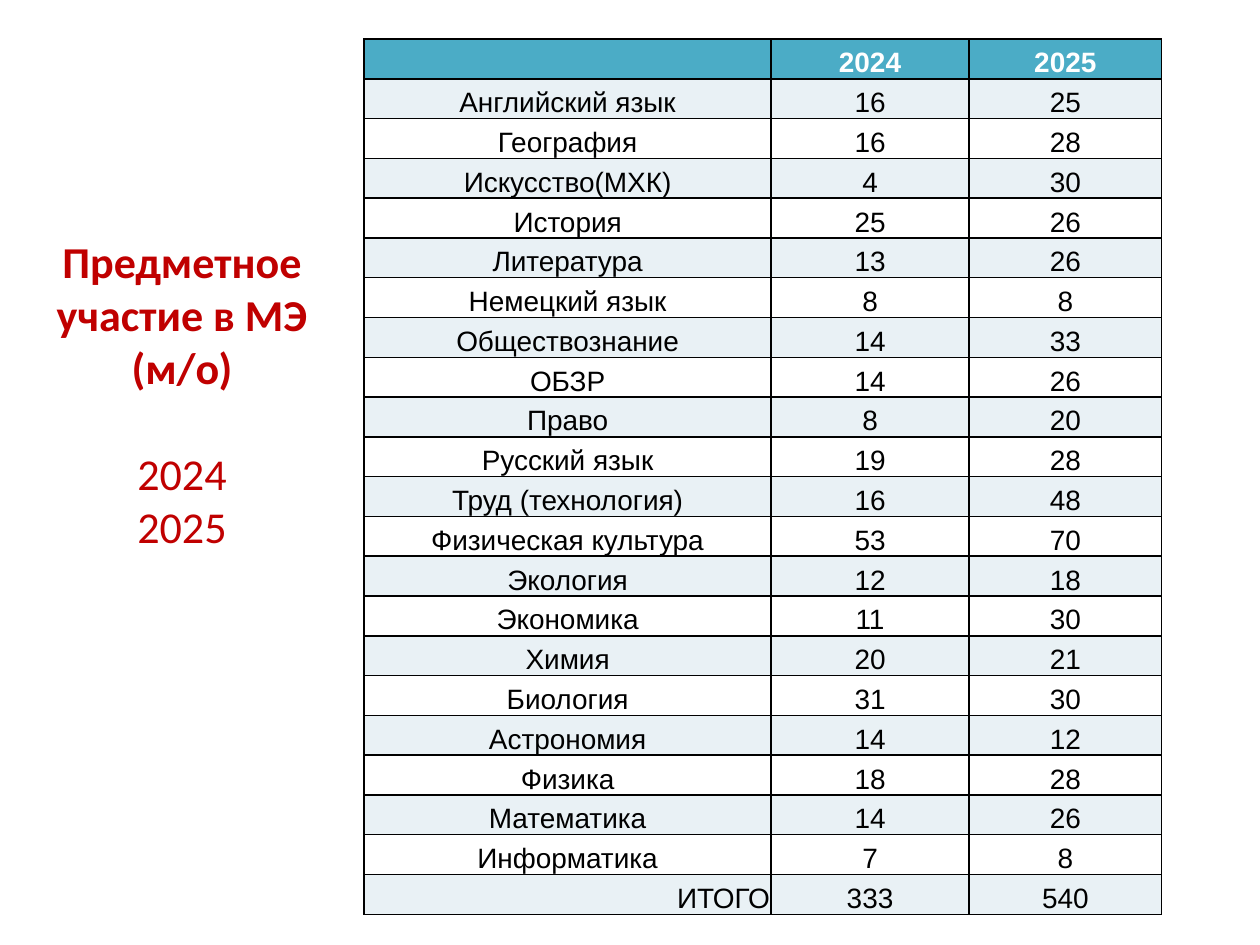
"""Build a slide with a table of subject participation in 2024 and 2025."""
from typing import NamedTuple

from lxml import etree
from pptx import Presentation
from pptx.dml.color import RGBColor
from pptx.enum.text import MSO_ANCHOR, MSO_AUTO_SIZE, PP_ALIGN
from pptx.oxml.ns import qn
from pptx.util import Inches, Pt

CENTER, RIGHT = PP_ALIGN.CENTER, PP_ALIGN.RIGHT
MIDDLE, BOTTOM = MSO_ANCHOR.MIDDLE, MSO_ANCHOR.BOTTOM
NO_AUTOFIT = MSO_AUTO_SIZE.NONE

RED, BLACK, WHITE = "C00000", "000000", "FFFFFF"
HEADER_FILL, BAND_FILL = "4BACC6", "E9F1F5"
COLUMN_WIDTHS = (3.23, 1.57, 1.53)
TABLE_LEFT, TABLE_TOP, TABLE_HEIGHT = 2.89, 0.31, 6.95
TITLE_FRAME = {"left": 0.31, "top": 1.87, "width": 2.27, "height": 2.5}
CELL_FORMAT = {
    "margin_left": Inches(0.01),
    "margin_right": Inches(0.01),
    "margin_top": Inches(0.01),
    "margin_bottom": 0,
    "vertical_anchor": BOTTOM,
}


class Subject(NamedTuple):
    name: str
    count_2024: int
    count_2025: int


SUBJECTS = (
    Subject("Английский язык", 16, 25),
    Subject("География", 16, 28),
    Subject("Искусство(МХК)", 4, 30),
    Subject("История", 25, 26),
    Subject("Литература", 13, 26),
    Subject("Немецкий язык", 8, 8),
    Subject("Обществознание", 14, 33),
    Subject("ОБЗР", 14, 26),
    Subject("Право", 8, 20),
    Subject("Русский язык", 19, 28),
    Subject("Труд (технология)", 16, 48),
    Subject("Физическая культура", 53, 70),
    Subject("Экология", 12, 18),
    Subject("Экономика", 11, 30),
    Subject("Химия", 20, 21),
    Subject("Биология", 31, 30),
    Subject("Астрономия", 14, 12),
    Subject("Физика", 18, 28),
    Subject("Математика", 14, 26),
    Subject("Информатика", 7, 8),
    Subject("ИТОГО", 333, 540),
)


def color(hex_value: str) -> RGBColor:
    return RGBColor.from_string(hex_value)


def format_font(font, name: str, size: float, hex_value: str, bold: bool) -> None:
    for attribute, value in {"name": name, "size": Pt(size), "bold": bold}.items():
        setattr(font, attribute, value)
    font.color.rgb = color(hex_value)


def add_borders(cell) -> None:
    properties = cell._tc.get_or_add_tcPr()
    for position, tag in enumerate(("a:lnL", "a:lnR", "a:lnT", "a:lnB")):
        line = etree.Element(qn(tag), w=str(Pt(1)))
        fill = etree.SubElement(line, qn("a:solidFill"))
        etree.SubElement(fill, qn("a:srgbClr"), val=BLACK)
        properties.insert(position, line)


def fill_cell(cell, text: str, fill: str, text_color: str, bold: bool, alignment) -> None:
    for attribute, value in CELL_FORMAT.items():
        setattr(cell, attribute, value)
    cell.fill.solid()
    cell.fill.fore_color.rgb = color(fill)
    add_borders(cell)
    if text:
        paragraph = cell.text_frame.paragraphs[0]
        paragraph.alignment = alignment
        run = paragraph.add_run()
        run.text = text
        format_font(run.font, "Arial", 16, text_color, bold)


def add_title(slide) -> None:
    title = slide.shapes.title
    for attribute, value in TITLE_FRAME.items():
        setattr(title, attribute, Inches(value))
    frame = title.text_frame
    frame.text = "Предметное участие в МЭ (м/о)"
    frame.add_paragraph().text = "2024\v2025"
    frame.word_wrap = True
    frame.auto_size = NO_AUTOFIT
    frame.vertical_anchor = MIDDLE
    heading, years = frame.paragraphs
    years.space_before = Pt(30.5)
    for paragraph, bold in ((heading, True), (years, False)):
        paragraph.alignment = CENTER
        for run in paragraph.runs:
            format_font(run.font, "Calibri", 25.2, RED, bold)


def add_subject_table(slide) -> None:
    rows = [("", "2024", "2025"), *SUBJECTS]
    table = slide.shapes.add_table(
        len(rows), len(COLUMN_WIDTHS), Inches(TABLE_LEFT), Inches(TABLE_TOP),
        Inches(sum(COLUMN_WIDTHS)), Inches(TABLE_HEIGHT),
    ).table
    for column, width in zip(table.columns, COLUMN_WIDTHS):
        column.width = Inches(width)
    for row_index, values in enumerate(rows):
        table.rows[row_index].height = Inches(TABLE_HEIGHT / len(rows))
        header = row_index == 0
        band = BAND_FILL if row_index % 2 else WHITE
        for column_index, value in enumerate(values):
            fill_cell(
                table.cell(row_index, column_index), str(value),
                HEADER_FILL if header else band,
                WHITE if header else BLACK, header,
                RIGHT if value == "ИТОГО" else CENTER,
            )


def main() -> None:
    presentation = Presentation()
    presentation.slide_width, presentation.slide_height = Inches(10), Inches(7.5)
    slide = presentation.slides.add_slide(presentation.slide_layouts[5])
    add_title(slide)
    add_subject_table(slide)
    presentation.save("out.pptx")


if __name__ == "__main__":
    main()
